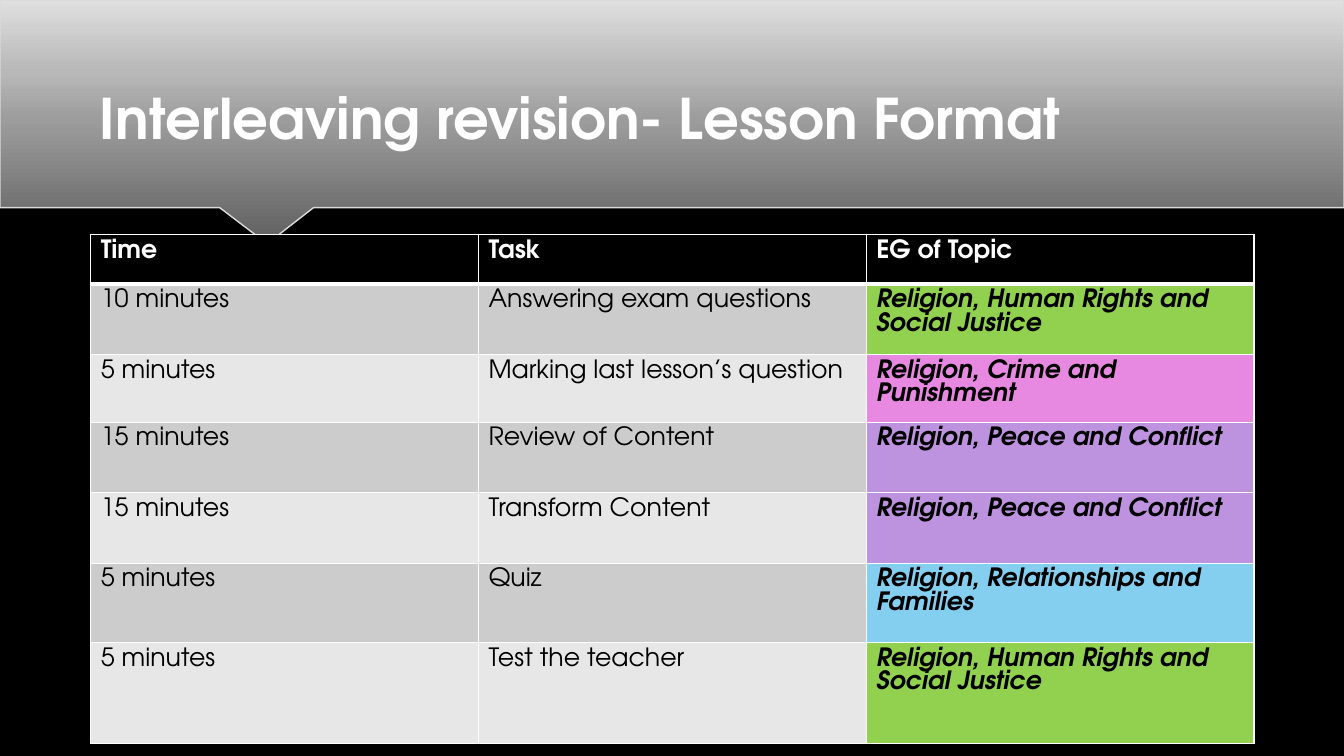
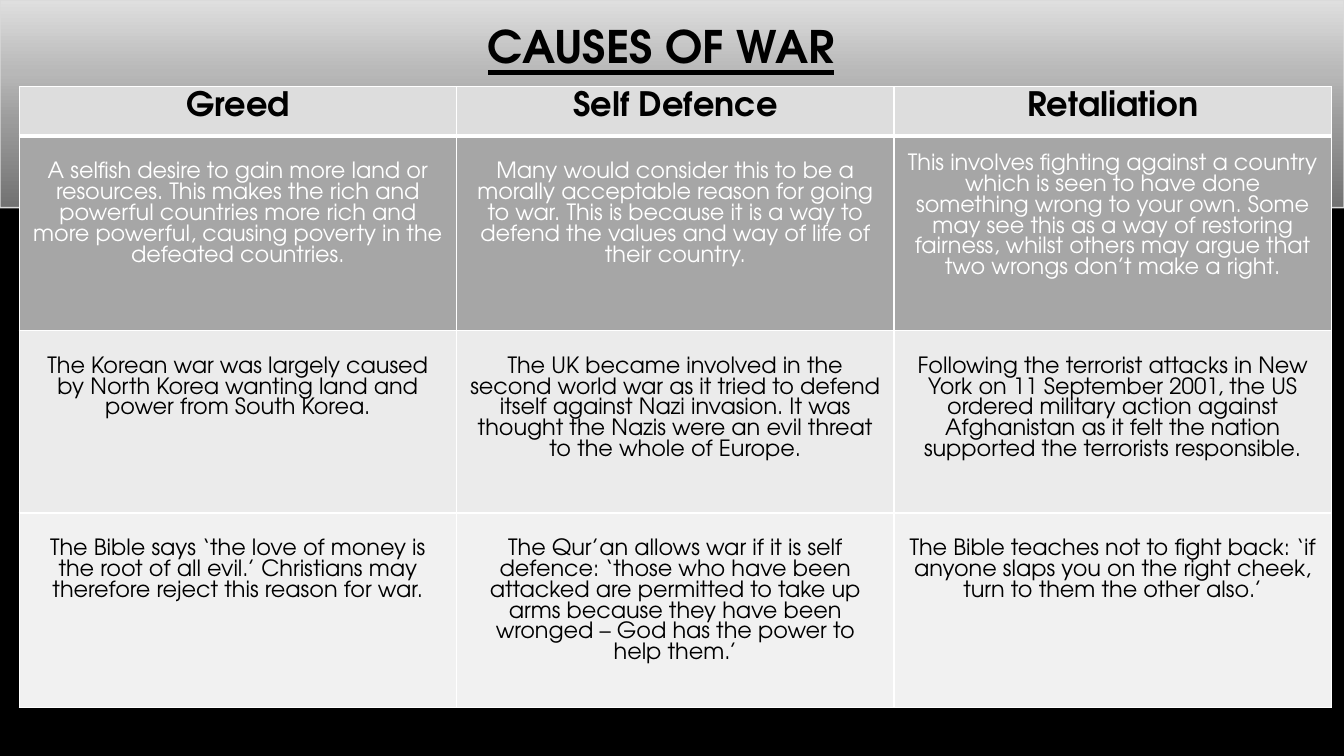
from lxml.etree import SubElement
from pptx import Presentation
from pptx.dml.color import RGBColor
from pptx.enum.text import MSO_ANCHOR, MSO_AUTO_SIZE, PP_ALIGN
from pptx.oxml import parse_xml
from pptx.oxml.ns import nsdecls, qn
from pptx.util import Inches, Pt

FONT = "TeX Gyre Adventor"
BLACK = RGBColor(0x00, 0x00, 0x00)
WHITE = RGBColor(0xFF, 0xFF, 0xFF)
TITLE_WHITE = RGBColor(0xFE, 0xFE, 0xFE)
BAND_LINE = RGBColor(0xDA, 0xDA, 0xDA)
BAND_STOPS = [(0, RGBColor(0x61, 0x61, 0x61)), (50, RGBColor(0x9C, 0x9C, 0x9C)),
              (70, RGBColor(0xB8, 0xB8, 0xB8)), (100, RGBColor(0xDF, 0xDF, 0xDF))]
ROW_DARK = RGBColor(0xCC, 0xCC, 0xCC)
ROW_LIGHT = RGBColor(0xE7, 0xE7, 0xE7)
GREEN = RGBColor(0x92, 0xD0, 0x50)
PINK = RGBColor(0xE7, 0x89, 0xE0)
PURPLE = RGBColor(0xBD, 0x92, 0xDE)
BLUE = RGBColor(0x84, 0xCF, 0xF0)
CAUSE_HEAD = RGBColor(0xDD, 0xDD, 0xDD)
CAUSE_REASON = RGBColor(0xA6, 0xA6, 0xA6)
CAUSE_EXAMPLE = RGBColor(0xEB, 0xEB, 0xEB)
CAUSE_TEACHING = RGBColor(0xF1, 0xF1, 0xF1)

# Band outline, in percent of the slide's width and height
BAND = [(100, 0), (0, 0), (0, 27.47), (16.35, 27.47), (19.5, 31.73), (19.7, 31.87),
        (20.05, 31.87), (20.25, 31.73), (23.33, 27.47), (100, 27.47)]


def soft_shadow():
    return parse_xml(
        f'<a:effectLst {nsdecls("a")}><a:outerShdw blurRad="{Pt(4)}" dist="{Pt(3)}" '
        f'dir="5400000"><a:srgbClr val="{BLACK}"><a:alpha val="35000"/></a:srgbClr>'
        '</a:outerShdw></a:effectLst>')


class Deck:
    """Holds the style and the current slide; lengths are percent of the slide."""

    def __init__(self):
        self.prs = Presentation()
        self.prs.slide_width, self.prs.slide_height = Inches(13.33), Inches(7.5)
        fill = self.prs.slide_master.background.fill
        fill.solid()
        fill.fore_color.rgb = BLACK
        self.s = None

    def x(self, share):
        return round(self.prs.slide_width * share / 100)

    def y(self, share):
        return round(self.prs.slide_height * share / 100)

    def new_slide(self):
        self.s = self.prs.slides.add_slide(self.prs.slide_layouts[5])

    def master_band(self):
        """Draw the pointed band and move it to the master, behind everything."""
        points = [(self.x(px), self.y(py)) for px, py in BAND]
        builder = self.s.shapes.build_freeform(*points[0], scale=1.0)
        builder.add_line_segments(points[1:], close=True)
        sp = builder.convert_to_shape()
        sp.line.color.rgb = BAND_LINE
        sp.line.width = Pt(1)
        stops = "".join(f'<a:gs pos="{pos * 1000}"><a:srgbClr val="{rgb}"/></a:gs>'
                        for pos, rgb in BAND_STOPS)
        sp.line._ln.addprevious(parse_xml(
            f'<a:gradFill {nsdecls("a")} rotWithShape="1"><a:gsLst>{stops}</a:gsLst>'
            '<a:lin ang="16200000" scaled="0"/></a:gradFill>'))
        sp.line._ln.addnext(soft_shadow())
        self.prs.slide_master.shapes._spTree.insert(2, sp._element)

    def run(self, p, text, size, color, bold=False, italic=False):
        r = p.add_run()
        r.text = text
        f = r.font
        f.name, f.size, f.bold, f.italic = FONT, Pt(size), bold, italic
        f.color.rgb = color
        return r

    def title(self, text, box, size, color, anchor, align, underline=False, shadow=False):
        sp = self.s.shapes.title
        left, top, width, height = box
        sp.left, sp.top = self.x(left), self.y(top)
        sp.width, sp.height = self.x(width), self.y(height)
        tf = sp.text_frame
        tf.word_wrap = True
        tf.auto_size = MSO_AUTO_SIZE.NONE
        tf.vertical_anchor = anchor
        p = tf.paragraphs[0]
        p.alignment = align
        r = self.run(p, text, size, color, bold=True)
        r.font.underline = underline
        if shadow:
            r._r.rPr.find(qn("a:solidFill")).addnext(soft_shadow())

    def table(self, left, top, col, rows, n_cols):
        """Add an empty table with equal columns."""
        frame = self.s.shapes.add_table(len(rows), n_cols, self.x(left), self.y(top),
                                        self.x(col * n_cols), self.y(sum(rows)))
        t = frame.table
        for column in t.columns:
            column.width = self.x(col)
        for row, height in zip(t.rows, rows):
            row.height = self.y(height)
        return t

    def cell(self, t, i, j, text, fill, size, color, align=PP_ALIGN.LEFT,
             side=0.1, gap=0, bold=False, italic=False):
        """Fill one cell; the rule under the header row is heavier."""
        c = t.cell(i, j)
        c.margin_left = c.margin_right = Inches(side)
        c.margin_top, c.margin_bottom = Inches(0.05 + gap), Inches(0.05)
        weights = {"lnL": 1, "lnR": 1, "lnT": 3 if i == 1 else 1, "lnB": 3 if i == 0 else 1}
        tcPr = c._tc.get_or_add_tcPr()
        for tag, weight in weights.items():
            ln = SubElement(tcPr, qn(f"a:{tag}"), w=str(Pt(weight)))
            solid = SubElement(ln, qn("a:solidFill"))
            SubElement(solid, qn("a:srgbClr"), val=str(WHITE))
        c.fill.solid()
        c.fill.fore_color.rgb = fill
        p = c.text_frame.paragraphs[0]
        p.alignment = align
        self.run(p, text, size, color, bold, italic)


def lesson_slide(deck):
    deck.title("Interleaving revision- Lesson Format", (6.68, 6.53, 86.7, 14.13),
               40, TITLE_WHITE, MSO_ANCHOR.BOTTOM, PP_ALIGN.LEFT, shadow=True)
    rights = "Religion, Human Rights and Social Justice"
    peace = "Religion, Peace and Conflict"
    # Minutes, task, topic, topic colour, row height
    tasks = [
        (10, "Answering exam questions", rights, GREEN, 9.33),
        (5, "Marking last lesson’s question", "Religion, Crime and Punishment", PINK, 8.93),
        (15, "Review of Content", peace, PURPLE, 9.33),
        (15, "Transform Content", peace, PURPLE, 9.33),
        (5, "Quiz", "Religion, Relationships and Families", BLUE, 10.53),
        (5, "Test the teacher", rights, GREEN, 13.33),
    ]
    t = deck.table(6.75, 31.07, 28.85, [6.53] + [task[-1] for task in tasks], 3)
    for j, head in enumerate(["Time", "Task", "EG of Topic"]):
        deck.cell(t, 0, j, head, BLACK, 18, WHITE, bold=True)
    for i, (minutes, task, topic, color, _) in enumerate(tasks, 1):
        band = ROW_DARK if i % 2 else ROW_LIGHT
        deck.cell(t, i, 0, f"{minutes} minutes", band, 18, BLACK)
        deck.cell(t, i, 1, task, band, 18, BLACK)
        deck.cell(t, i, 2, topic, color, 18, BLACK, bold=True, italic=True)


def causes_slide(deck):
    deck.title("CAUSES OF WAR", (29.1, 1.87, 40.2, 8.53), 32, BLACK,
               MSO_ANCHOR.TOP, PP_ALIGN.CENTER, underline=True)
    # Fill, text colour, row height, one text per cause
    rows = [
        (CAUSE_HEAD, BLACK, 6.53, ["Greed", "Self Defence", "Retaliation"]),
        (CAUSE_REASON, WHITE, 25.73, [
            "A selfish desire to gain more land or resources. This makes the rich and "
            "powerful countries more rich and more powerful, causing poverty in the "
            "defeated countries.",
            "Many would consider this to be a morally acceptable reason for going to war. "
            "This is because it is a way to defend the values and way of life of their "
            "country.",
            "This involves fighting against a country which is seen to have done something "
            "wrong to your own. Some may see this as a way of restoring fairness, whilst "
            "others may argue that two wrongs don’t make a right."]),
        (CAUSE_EXAMPLE, BLACK, 24.13, [
            "The Korean war was largely caused by North Korea wanting land and power from "
            "South Korea.",
            "The UK became involved in the second world war as it tried to defend itself "
            "against Nazi invasion. It was thought the Nazis were an evil threat to the "
            "whole of Europe.",
            "Following the terrorist attacks in New York on 11 September 2001, the US "
            "ordered military action against Afghanistan as it felt the nation supported "
            "the terrorists responsible."]),
        (CAUSE_TEACHING, BLACK, 25.73, [
            "The Bible says ‘the love of money is the root of all evil.’ Christians may "
            "therefore reject this reason for war.",
            "The Qur’an allows war if it is self defence: ‘those who have been attacked are "
            "permitted to take up arms because they have been wronged – God has the power "
            "to help them.’",
            "The Bible teaches not to fight back: ‘if anyone slaps you on the right cheek, "
            "turn to them the other also.’"]),
    ]
    t = deck.table(1.43, 11.47, 32.55, [row[2] for row in rows], 3)
    for i, (fill, color, _, texts) in enumerate(rows):
        for j, text in enumerate(texts):
            header = i == 0
            # The longest text starts a little higher
            gap = 0 if header else 0.13 if (i, j) == (1, 2) else 0.21
            deck.cell(t, i, j, text, fill, 24 if header else 16, color,
                      PP_ALIGN.CENTER, side=0.13, gap=gap, bold=header)


def main():
    deck = Deck()
    deck.new_slide()
    deck.master_band()
    lesson_slide(deck)
    deck.new_slide()
    causes_slide(deck)
    deck.prs.save("out.pptx")


if __name__ == "__main__":
    main()
